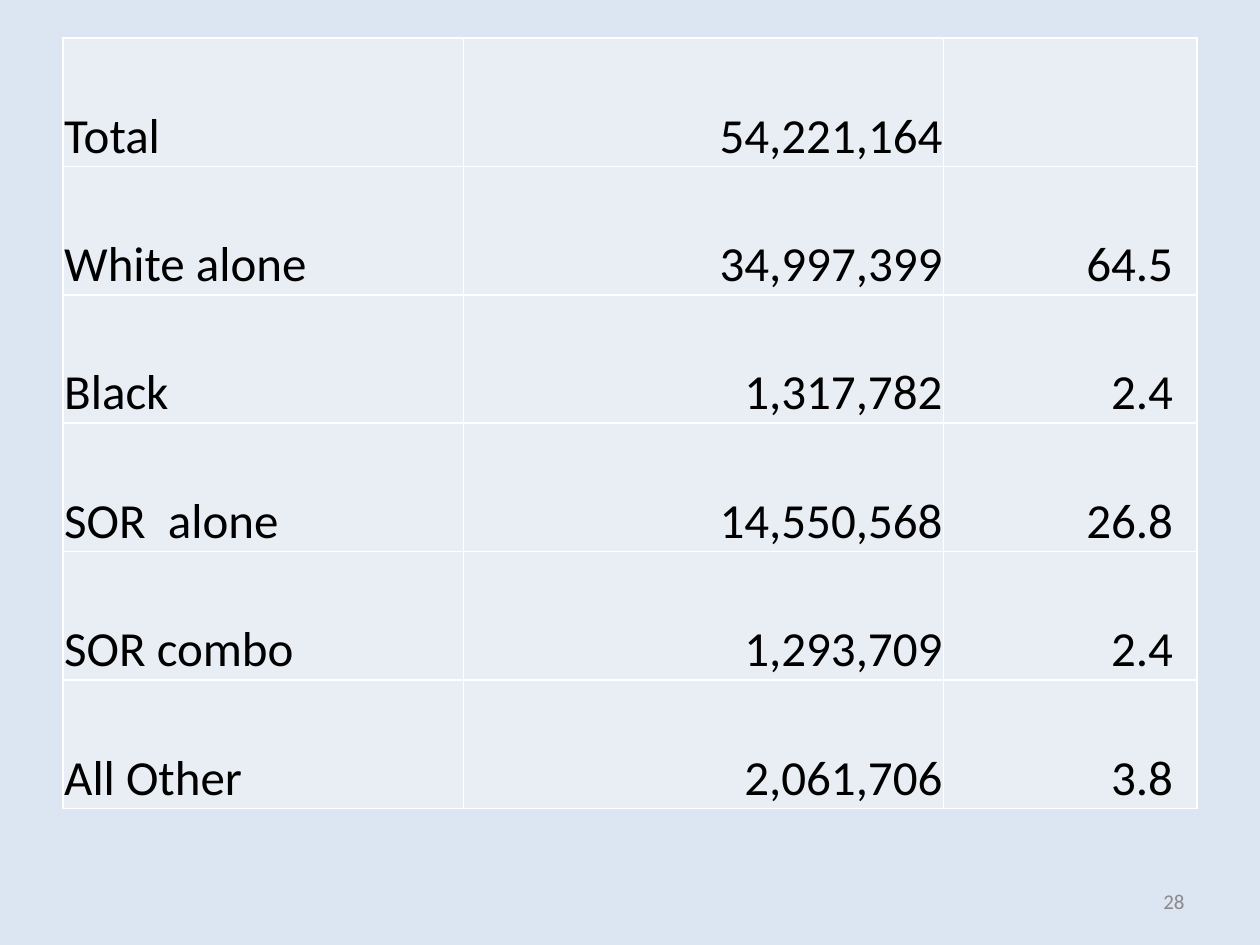
from pptx import Presentation
from pptx.dml.color import RGBColor
from pptx.enum.text import MSO_ANCHOR as Anchor, PP_ALIGN as Align
from pptx.oxml import parse_xml
from pptx.oxml.ns import nsdecls
from pptx.util import Inches, Pt

BACKGROUND = RGBColor(0xDC, 0xE6, 0xF2)
CELL_FILL = RGBColor(0xE9, 0xED, 0xF4)
GRID_LINE = RGBColor(0xFF, 0xFF, 0xFF)
TEXT = RGBColor(0x00, 0x00, 0x00)
PAGE_GREY = RGBColor(0x89, 0x89, 0x89)
FONT = "Calibri"

POPULATION = [
    ("Total", "54,221,164", ""),
    ("White alone", "34,997,399", "64.5"),
    ("Black", "1,317,782", "2.4"),
    ("SOR  alone", "14,550,568", "26.8"),
    ("SOR combo", "1,293,709", "2.4"),
    ("All Other", "2,061,706", "3.8"),
]
# Width, alignment and right margin of the group, count and percent columns
COLUMNS = [
    (3.18, Align.LEFT, 0.01),
    (3.81, Align.RIGHT, 0.01),
    (2.01, Align.RIGHT, 0.19),
]


def write(paragraph, text, size, color, align):
    paragraph.text = text
    paragraph.alignment = align
    paragraph.font.name = FONT
    paragraph.font.size = Pt(size)
    paragraph.font.color.rgb = color


def add_borders(cell):
    """Draw all four cell borders; call before the fill is set."""
    properties = cell._tc.get_or_add_tcPr()
    for side in "LRTB":
        properties.append(parse_xml(
            f'<a:ln{side} {nsdecls("a")} w="{Pt(1)}"><a:solidFill>'
            f'<a:srgbClr val="{GRID_LINE}"/></a:solidFill></a:ln{side}>'))


def format_cell(cell, right_margin):
    cell_format = {
        "vertical_anchor": Anchor.BOTTOM,
        "margin_left": Inches(0.01),
        "margin_top": Inches(0.01),
        "margin_right": Inches(right_margin),
        "margin_bottom": 0,
    }
    for name, value in cell_format.items():
        setattr(cell, name, value)
    add_borders(cell)
    cell.fill.solid()
    cell.fill.fore_color.rgb = CELL_FILL


def add_population_table(slide, left, top, width, height):
    table = slide.shapes.add_table(
        len(POPULATION), len(COLUMNS), left, top, width, height).table
    table.first_row = table.horz_banding = False
    for column, (column_width, _, _) in zip(table.columns, COLUMNS):
        column.width = Inches(column_width)
    for row, values in zip(table.rows, POPULATION):
        for cell, value, (_, align, margin) in zip(row.cells, values, COLUMNS):
            format_cell(cell, margin)
            write(cell.text_frame.paragraphs[0], value, 28, TEXT, align)


def add_page_number(slide, left, top, width, height):
    frame = slide.shapes.add_textbox(left, top, width, height).text_frame
    frame.word_wrap = True
    frame.vertical_anchor = Anchor.MIDDLE
    write(frame.paragraphs[0], "28", 12, PAGE_GREY, Align.RIGHT)


def main():
    deck = Presentation()
    deck.slide_width, deck.slide_height = Inches(10), Inches(7.5)
    slide = deck.slides.add_slide(deck.slide_layouts[6])
    slide.background.fill.solid()
    slide.background.fill.fore_color.rgb = BACKGROUND
    add_population_table(
        slide, Inches(0.5), Inches(0.3), Inches(9), Inches(6.12))
    add_page_number(
        slide, Inches(7.17), Inches(6.95), Inches(2.33), Inches(0.4))
    deck.save("out.pptx")


if __name__ == "__main__":
    main()
